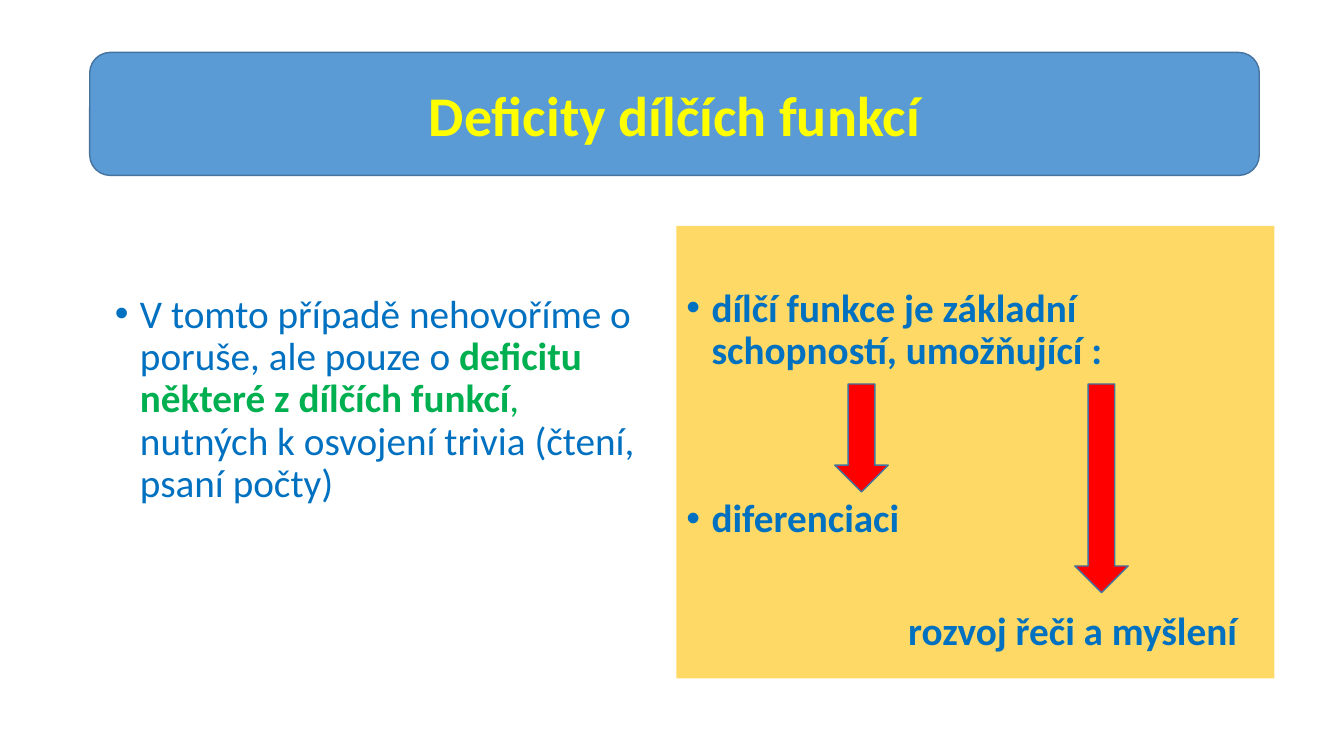
from lxml.etree import SubElement
from pptx import Presentation
from pptx.dml.color import RGBColor
from pptx.enum.shapes import MSO_SHAPE
from pptx.enum.text import MSO_ANCHOR, PP_ALIGN
from pptx.oxml.ns import qn
from pptx.util import Pt

PX = 9144
BLUE = RGBColor(0x00, 0x70, 0xC0)
GREEN = RGBColor(0x00, 0xB0, 0x50)
YELLOW = RGBColor(0xFF, 0xFF, 0x00)
RED = RGBColor(0xFF, 0x00, 0x00)
BANNER = RGBColor(0x5B, 0x9B, 0xD5)
OUTLINE = RGBColor(0x43, 0x73, 0x9E)
PANEL = RGBColor(0xFF, 0xD9, 0x66)


class SlideBuilder:
    """Holds the text style and the current slide."""

    font = "Calibri"
    body_size = 28
    title_size = 40
    bullet_indent = 25

    def __init__(self, prs):
        self.s = prs.slides.add_slide(prs.slide_layouts[6])

    def shape(self, kind, box, fill, line=None):
        """Add a flat preset shape."""
        sp = self.s.shapes.add_shape(kind, *(v * PX for v in box))
        sp.shadow.inherit = False
        sp.fill.solid()
        sp.fill.fore_color.rgb = fill
        if line is None:
            sp.line.fill.background()
        else:
            sp.line.color.rgb = line
            sp.line.width = Pt(1)
        return sp

    def style(self, r, size, color, bold):
        """Format one run."""
        r.font.name = self.font
        r.font.size = Pt(size)
        r.font.color.rgb = color
        r.font.bold = bold

    def banner(self, box, text):
        """Add the rounded title bar."""
        sp = self.shape(MSO_SHAPE.ROUNDED_RECTANGLE, box, BANNER, OUTLINE)
        tf = sp.text_frame
        tf.text = text
        tf.vertical_anchor = MSO_ANCHOR.MIDDLE
        p = tf.paragraphs[0]
        p.alignment = PP_ALIGN.CENTER
        self.style(p.runs[0], self.title_size, YELLOW, True)

    def body(self, box, top, paragraphs, fill=None):
        """Add body text, each paragraph given as gap, indent and runs."""
        if fill is None:
            sp = self.s.shapes.add_textbox(*(v * PX for v in box))
        else:
            sp = self.shape(MSO_SHAPE.RECTANGLE, box, fill)
        tf = sp.text_frame
        tf.word_wrap = True
        tf.vertical_anchor = MSO_ANCHOR.TOP
        tf.margin_top = top * PX
        for i, (gap, indent, runs) in enumerate(paragraphs):
            p = tf.add_paragraph() if i else tf.paragraphs[0]
            p.alignment = PP_ALIGN.LEFT
            p.line_spacing = 0.9
            p.space_before = Pt(gap)
            self.indent(p, indent)
            for text, color, bold in runs:
                r = p.add_run()
                r.text = text
                self.style(r, self.body_size, color, bold)

    def indent(self, p, indent):
        """Indent a paragraph, or give it a bullet when indent is None."""
        pPr = p._p.get_or_add_pPr()
        if indent is None:
            pPr.set("marL", str(self.bullet_indent * PX))
            pPr.set("indent", str(-self.bullet_indent * PX))
            SubElement(pPr, qn("a:buFont"), typeface="Arial")
            SubElement(pPr, qn("a:buChar"), char="•")
        else:
            pPr.set("marL", str(indent * PX))
            pPr.set("indent", "0")
            SubElement(pPr, qn("a:buNone"))

    def down_arrow(self, x, y, height):
        """Add a red arrow pointing down."""
        self.shape(MSO_SHAPE.DOWN_ARROW, (x, y, 53, height), RED, OUTLINE)


def main():
    """Build and save the slide."""
    prs = Presentation()
    prs.slide_width, prs.slide_height = 1333 * PX, 750 * PX
    b = SlideBuilder(prs)
    b.body((104, 174, 554, 500), 118, [
        (0, None, [
            ("V tomto případě nehovoříme o poruše, ale pouze o ", BLUE, False),
            ("deficitu některé z dílčích funkcí", GREEN, True),
            (", ", GREEN, False),
            ("nutných k osvojení trivia (čtení, psaní počty)", BLUE, False),
        ]),
    ])
    b.body((671, 224, 593, 449), 62, [
        (0, None, [("dílčí funkce je základní schopností, umožňující :", BLUE, True)]),
        (90, None, [("diferenciaci", BLUE, True)]),
        (50, 220, [("rozvoj řeči a myšlení", BLUE, True)]),
    ], PANEL)
    b.banner((89, 52, 1160, 122), "Deficity dílčích funkcí")
    for x, height in ((828, 107), (1066, 207)):
        b.down_arrow(x, 381, height)
    prs.save("out.pptx")


if __name__ == "__main__":
    main()
